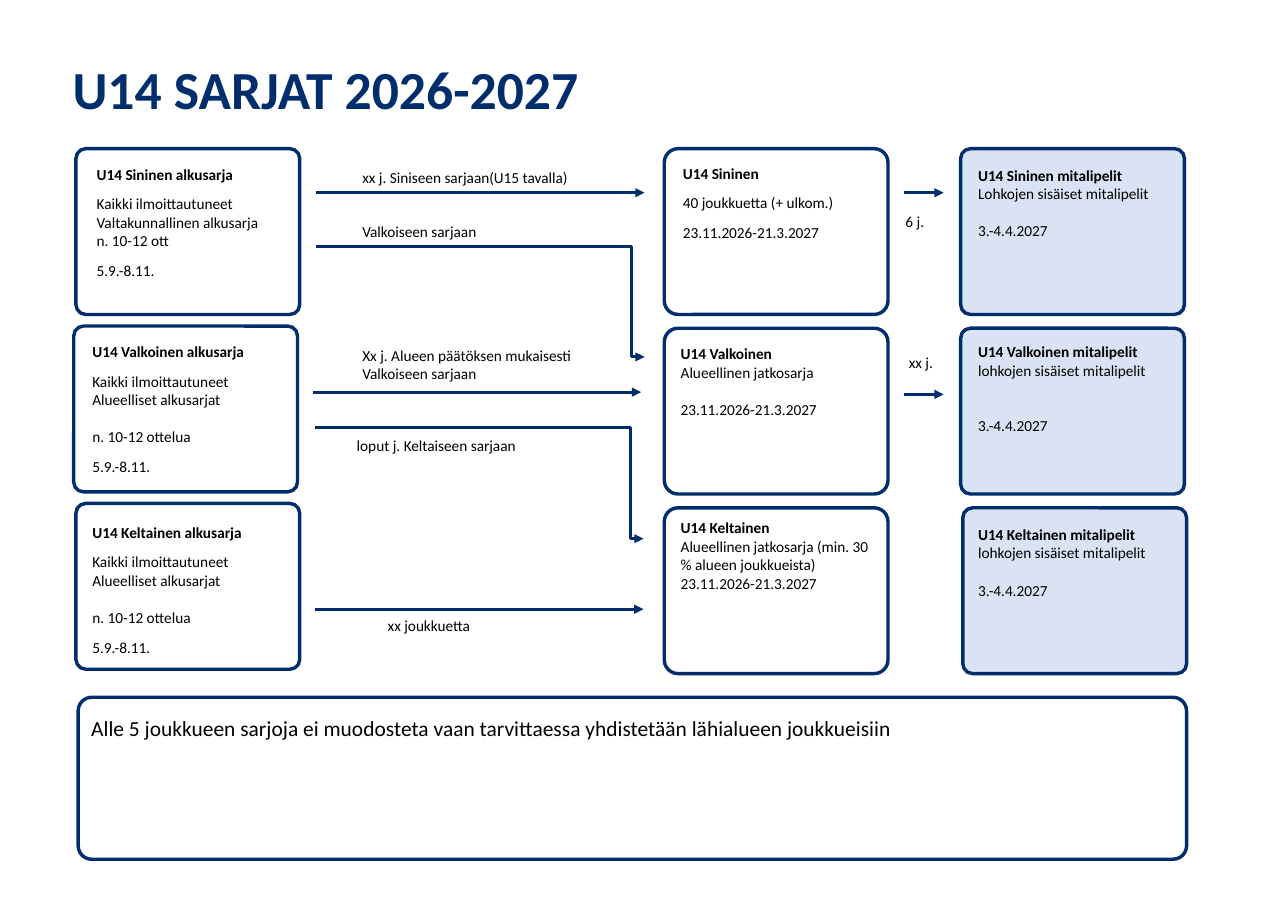
from dataclasses import dataclass

from lxml.etree import SubElement
from pptx import Presentation
from pptx.dml.color import RGBColor
from pptx.enum.shapes import MSO_CONNECTOR, MSO_SHAPE
from pptx.oxml.ns import qn
from pptx.slide import Slide
from pptx.util import Inches, Length, Pt

SLIDE_WIDTH, SLIDE_HEIGHT = Inches(11.69), Inches(8.27)
COLORS = {"navy": "002E6D", "pale": "DAE3F3", "black": "000000"}
FONT = "Calibri"

# Positions and sizes are percentages of the slide's width and height.
CARD_WIDTH, CARD_HEIGHT, FIRST_ROW = 17.37, 18.2, 16.32
LONG_ARROW, SHORT_ARROW = 25.49, 3.12
ELBOW_BEND = 96100
NARROW_GAP, WIDE_GAP = 7.3, 12.2  # points


@dataclass(frozen=True)
class Line:
    text: str
    gap: float = 0
    bold: bool = False


@dataclass(frozen=True)
class Card:
    lines: list[Line]
    inset_left: float
    inset_top: float
    shift: float = 0


@dataclass(frozen=True)
class Stage:
    left: float
    row_pitch: float
    text_width: float
    corner: float
    fill: str | None
    cards: list[Card]


@dataclass(frozen=True)
class Label:
    text: str
    left: float
    top: float
    width: float
    size: float = 10
    bold: bool = False
    color: str = "black"
    height: float = 6.89


@dataclass(frozen=True)
class Arrow:
    left: float
    top: float
    width: float = LONG_ARROW
    drop: float = 0


def heading(text: str) -> Line:
    return Line(text, bold=True)


REGIONAL_START = [
    Line("Kaikki ilmoittautuneet", NARROW_GAP),
    Line("Alueelliset alkusarjat"),
    Line("n. 10-12 ottelua", WIDE_GAP),
    Line("5.9.-8.11.", NARROW_GAP),
]
SEASON = "23.11.2026-21.3.2027"
FINALS = "3.-4.4.2027"

STAGES = [
    Stage(5.9, 19.47, 15.48, 0.059, None, [
        Card([heading("U14 Sininen alkusarja"),
              Line("Kaikki ilmoittautuneet", NARROW_GAP),
              Line("Valtakunnallinen alkusarja"),
              Line("n. 10-12 ott"),
              Line("5.9.-8.11.", NARROW_GAP)], 0.77, 1.21),
        Card([heading("U14 Valkoinen alkusarja"), *REGIONAL_START], 0.6, 1.21, -0.17),
        Card([heading("U14 Keltainen alkusarja"), *REGIONAL_START], 0.43, 1.57),
    ]),
    Stage(51.58, 19.71, 16.6, 0.083, None, [
        Card([heading("U14 Sininen"),
              Line("40 joukkuetta (+ ulkom.)", NARROW_GAP),
              Line(SEASON, NARROW_GAP)], 0.6, 1.09),
        Card([heading("U14 Valkoinen"),
              Line("Alueellinen jatkosarja"),
              Line(SEASON, WIDE_GAP)], 0.43, 1.21),
        Card([heading("U14 Keltainen"),
              Line(f"Alueellinen jatkosarja (min. 30 % alueen joukkueista) {SEASON}")],
             0.43, 0.6),
    ]),
    Stage(74.59, 19.71, 15.48, 0.059, "pale", [
        Card([heading("U14 Sininen mitalipelit"),
              Line("Lohkojen sisäiset mitalipelit"),
              Line(FINALS, WIDE_GAP)], 0.51, 1.33),
        Card([heading("U14 Valkoinen mitalipelit"),
              Line("lohkojen sisäiset mitalipelit"),
              Line(FINALS, 2 * WIDE_GAP)], 0.51, 0.97),
        Card([heading("U14 Keltainen mitalipelit"),
              Line("lohkojen sisäiset mitalipelit"),
              Line(FINALS, WIDE_GAP)], 0.34, 1.33, 0.17),
    ]),
]

LABELS = [
    Label("U14 SARJAT 2026-2027", 4.79, 5.56, 82.46, 35, True, "navy", 8.34),
    Label("xx j. Siniseen sarjaan(U15 tavalla)", 27.29, 17.9, 19.16),
    Label("Valkoiseen sarjaan", 27.29, 23.82, 19.16, height=3.26),
    Label("Xx j. Alueen päätöksen mukaisesti Valkoiseen sarjaan", 27.29, 37.36, 19.16),
    Label("loput j. Keltaiseen sarjaan", 26.86, 47.28, 15.48, height=3.26),
    Label("xx joukkuetta", 29.26, 66.99, 15.48),
    Label("6 j.", 69.46, 22.73, 4.88),
    Label("xx j.", 69.72, 38.21, 4.88),
    Label("Alle 5 joukkueen sarjoja ei muodosteta vaan tarvittaessa yhdistetään "
          "lähialueen joukkueisiin", 6.24, 77.87, 84.94, 14),
]

ARROWS = [
    Arrow(24.55, 21.16),
    Arrow(24.55, 27.09, drop=12.09),
    Arrow(24.29, 43.05),
    Arrow(24.47, 46.92, drop=12.21),
    Arrow(24.47, 66.87),
    Arrow(70.15, 21.16, SHORT_ARROW),
    Arrow(70.15, 43.29, SHORT_ARROW),
]


def across(percent: float) -> Length:
    return Length(round(SLIDE_WIDTH * percent / 100))


def down(percent: float) -> Length:
    return Length(round(SLIDE_HEIGHT * percent / 100))


def color(name: str) -> RGBColor:
    return RGBColor.from_string(COLORS[name])


def draw_frame(slide: Slide, left: float, top: float, width: float, height: float,
               corner: float, fill: str | None = None) -> None:
    shape = slide.shapes.add_shape(MSO_SHAPE.ROUNDED_RECTANGLE, across(left), down(top),
                                   across(width), down(height))
    shape.adjustments[0] = corner
    shape.shadow.inherit = False
    shape.line.color.rgb = color("navy")
    shape.line.width = Pt(2.25)
    if fill:
        shape.fill.solid()
        shape.fill.fore_color.rgb = color(fill)
    else:
        shape.fill.background()


def draw_text(slide: Slide, lines: list[Line], left: float, top: float, width: float,
              height: float, size: float = 10, text_color: str = "black") -> None:
    text_frame = slide.shapes.add_textbox(across(left), down(top), across(width),
                                          down(height)).text_frame
    text_frame.word_wrap = True
    for index, line in enumerate(lines):
        paragraph = text_frame.add_paragraph() if index else text_frame.paragraphs[0]
        paragraph.text = line.text
        if line.gap:
            paragraph.space_before = Pt(line.gap)
        paragraph.font.name = FONT
        paragraph.font.size = Pt(size)
        paragraph.font.bold = line.bold
        paragraph.font.color.rgb = color(text_color)


def draw_stage(slide: Slide, stage: Stage) -> None:
    for row, card in enumerate(stage.cards):
        left, top = stage.left + card.shift, FIRST_ROW + row * stage.row_pitch
        draw_frame(slide, left, top, CARD_WIDTH, CARD_HEIGHT, stage.corner, stage.fill)
        draw_text(slide, card.lines, left + card.inset_left, top + card.inset_top,
                  stage.text_width, 15.72)


def draw_arrow(slide: Slide, arrow: Arrow) -> None:
    kind = MSO_CONNECTOR.ELBOW if arrow.drop else MSO_CONNECTOR.STRAIGHT
    connector = slide.shapes.add_connector(
        kind, across(arrow.left), down(arrow.top),
        across(arrow.left + arrow.width), down(arrow.top + arrow.drop))
    connector.line.color.rgb = color("navy")
    connector.line.width = Pt(2)
    properties = connector._element.spPr
    SubElement(properties.find(qn("a:ln")), qn("a:tailEnd"), type="triangle")
    SubElement(properties, qn("a:effectLst"))
    if arrow.drop:
        adjustments = properties.find(qn("a:prstGeom")).get_or_add_avLst()
        SubElement(adjustments, qn("a:gd"), name="adj1", fmla=f"val {ELBOW_BEND}")


def main() -> None:
    presentation = Presentation()
    presentation.slide_width, presentation.slide_height = SLIDE_WIDTH, SLIDE_HEIGHT
    slide = presentation.slides.add_slide(presentation.slide_layouts[6])
    for stage in STAGES:
        draw_stage(slide, stage)
    draw_frame(slide, 6.07, 76.54, 86.06, 17.78, 0.083)
    for arrow in ARROWS:
        draw_arrow(slide, arrow)
    for label in LABELS:
        draw_text(slide, [Line(label.text, bold=label.bold)], label.left, label.top,
                  label.width, label.height, label.size, label.color)
    presentation.save("out.pptx")


if __name__ == "__main__":
    main()
